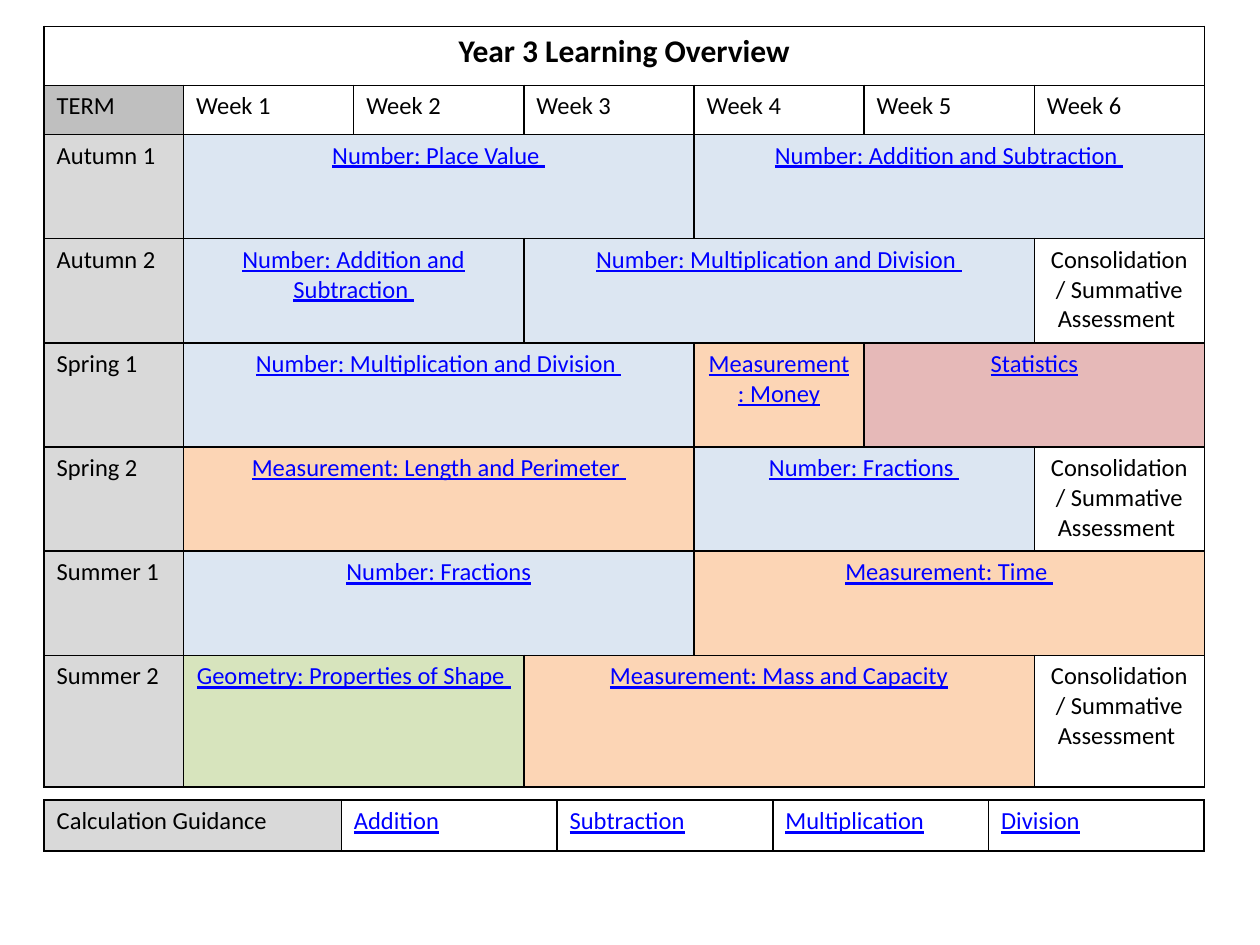
from lxml import etree
from pptx import Presentation
from pptx.dml.color import RGBColor
from pptx.enum.text import PP_ALIGN
from pptx.oxml.ns import qn
from pptx.util import Cm, Pt

LEFT, CENTER = PP_ALIGN.LEFT, PP_ALIGN.CENTER

COLORS = {
    "text": "000000",
    "border": "000000",
    "link": "0000FF",
    "header": "BFBFBF",
    "term": "D9D9D9",
    "number": "DCE6F2",
    "measurement": "FCD5B5",
    "statistics": "E6B9B8",
    "geometry": "D7E4BD",
}

ASSESSMENT = ("Consolidation/ Summative Assessment ", 1, None)

# Each topic: text, number of weeks, fill colour
TERMS = [
    ("Autumn 1", [("Number: Place Value ", 3, "number"),
                  ("Number: Addition and Subtraction ", 3, "number")]),
    ("Autumn 2", [("Number: Addition and Subtraction ", 2, "number"),
                  ("Number: Multiplication and Division ", 3, "number"),
                  ASSESSMENT]),
    ("Spring 1", [("Number: Multiplication and Division ", 3, "number"),
                  ("Measurement: Money", 1, "measurement"),
                  ("Statistics", 2, "statistics")]),
    ("Spring 2", [("Measurement: Length and Perimeter ", 3, "measurement"),
                  ("Number: Fractions ", 2, "number"),
                  ASSESSMENT]),
    ("Summer 1", [("Number: Fractions", 3, "number"),
                  ("Measurement: Time ", 3, "measurement")]),
    ("Summer 2", [("Geometry: Properties of Shape ", 2, "geometry"),
                  ("Measurement: Mass and Capacity", 3, "measurement"),
                  ASSESSMENT]),
]

OPERATIONS = ["Addition", "Subtraction", "Multiplication", "Division"]


def set_borders(cell):
    tc_pr = cell._tc.get_or_add_tcPr()
    for side in ("a:lnL", "a:lnR", "a:lnT", "a:lnB"):
        ln = etree.SubElement(tc_pr, qn(side), w=str(Pt(1)))
        fill = etree.SubElement(ln, qn("a:solidFill"))
        etree.SubElement(fill, qn("a:srgbClr"), val=COLORS["border"])


def add_grid(s, top, col_widths, row_heights):
    """Add a table with black borders and no fill, sized in centimetres."""
    frame = s.shapes.add_table(
        len(row_heights), len(col_widths), Cm(0.89), Cm(top),
        Cm(sum(col_widths)), Cm(sum(row_heights)))
    table = frame.table
    table.first_row = table.horz_banding = False
    for col, width in zip(table.columns, col_widths):
        col.width = Cm(width)
    for row, height in zip(table.rows, row_heights):
        row.height = Cm(height)
    for cell in table.iter_cells():
        set_borders(cell)
        cell.fill.background()
    return table


def write_cell(table, row, col, text, span=1, fill=None, align=LEFT,
               size=14, bold=False, link=False):
    cell = table.cell(row, col)
    if span > 1:
        cell.merge(table.cell(row, col + span - 1))
    if fill:
        cell.fill.solid()
        cell.fill.fore_color.rgb = RGBColor.from_string(COLORS[fill])
    p = cell.text_frame.paragraphs[0]
    p.alignment = align
    r = p.add_run()
    r.text = text
    r.font.name = "Calibri"
    r.font.size = Pt(size)
    r.font.bold = bold
    r.font.underline = link
    r.font.color.rgb = RGBColor.from_string(COLORS["link" if link else "text"])


def add_overview(s):
    table = add_grid(s, 0.53, [2.81] + [3.43] * 6,
                     [1.19, 0.99] + [2.1] * 5 + [2.65])
    write_cell(table, 0, 0, "Year 3 Learning Overview", span=7,
               align=CENTER, size=18, bold=True)
    write_cell(table, 1, 0, "TERM", fill="header")
    for week in range(1, 7):
        write_cell(table, 1, week, f"Week {week}")
    for row, (term, topics) in enumerate(TERMS, start=2):
        write_cell(table, row, 0, term, fill="term")
        week = 1
        for text, weeks, fill in topics:
            write_cell(table, row, week, text, span=weeks, fill=fill,
                       align=CENTER, link=fill is not None)
            week += weeks


def add_calculation_guidance(s):
    table = add_grid(s, 16.13, [5.99] + [4.35] * 4, [1.03])
    write_cell(table, 0, 0, "Calculation Guidance", fill="term")
    for col, operation in enumerate(OPERATIONS, start=1):
        write_cell(table, 0, col, operation, link=True)


def main():
    prs = Presentation()
    prs.slide_width, prs.slide_height = Cm(25.4), Cm(19.05)
    s = prs.slides.add_slide(prs.slide_layouts[6])
    add_overview(s)
    add_calculation_guidance(s)
    prs.save("out.pptx")


if __name__ == "__main__":
    main()
